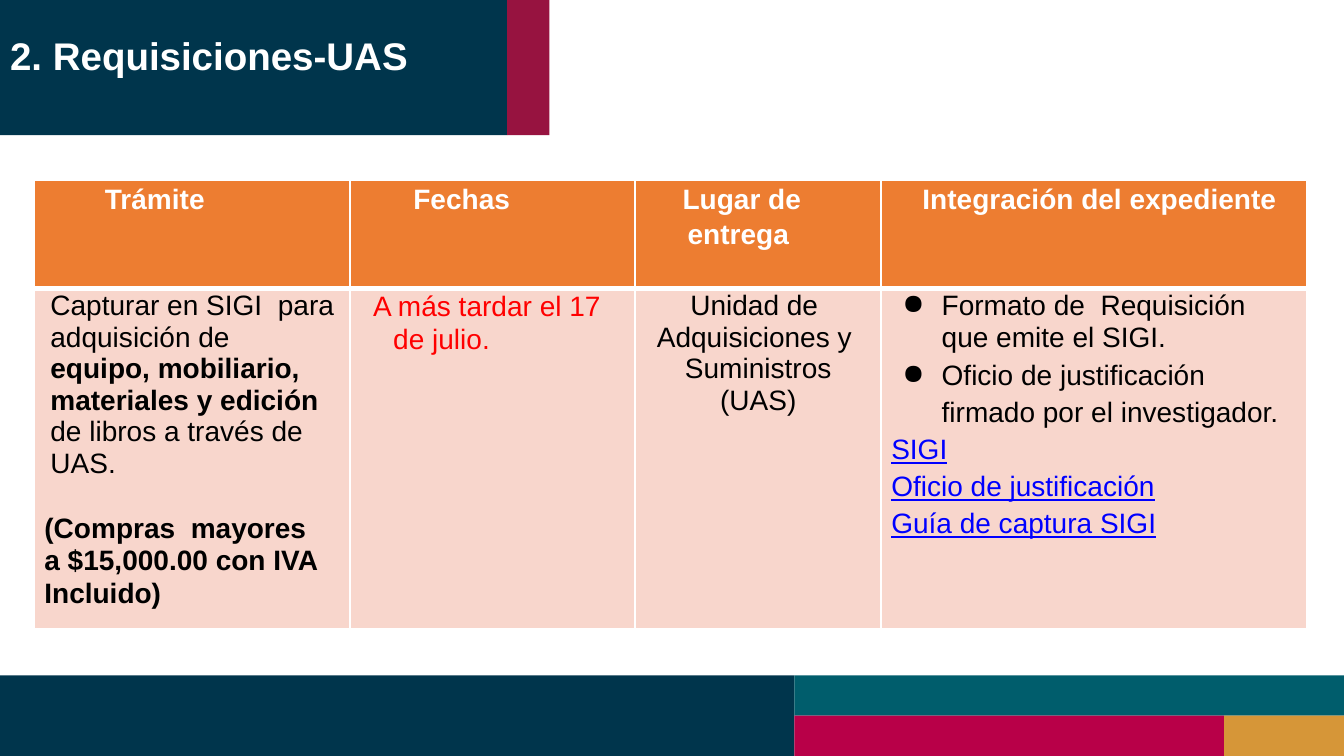
from lxml import etree
from pptx import Presentation, util as u
from pptx.dml.color import RGBColor
from pptx.enum import shapes, text
from pptx.oxml import ns

NAVY = RGBColor(0x00, 0x35, 0x4C)
GOLD = RGBColor(0xD6, 0x96, 0x38)
CRIMSON = RGBColor(0xB8, 0x00, 0x48)
TEAL = RGBColor(0x00, 0x5D, 0x6C)
WINE = RGBColor(0x97, 0x13, 0x40)
ORANGE = RGBColor(0xED, 0x7D, 0x31)
PINK = RGBColor(0xF8, 0xD6, 0xCC)
WHITE = RGBColor(0xFF, 0xFF, 0xFF)
BLACK = RGBColor(0x00, 0x00, 0x00)
RED = RGBColor(0xFF, 0x00, 0x00)
BLUE = RGBColor(0x00, 0x00, 0xFF)

CENTER = text.PP_ALIGN.CENTER
BANDS = [
    (0, 0, 5.03, 1.34, NAVY),
    (5.03, 0, 0.42, 1.34, WINE),
    (0, 6.7, 7.88, 0.8, NAVY),
    (7.88, 6.7, 5.45, 0.4, TEAL),
    (7.88, 7.1, 4.26, 0.4, CRIMSON),
    (12.14, 7.1, 1.19, 0.4, GOLD),
]
COLUMN_WIDTHS = [3.13, 2.83, 2.44, 4.22]
ROW_HEIGHTS = [1.07, 3.38]
THIN, THICK = 1.5, 4.25

HEADERS = [
    [dict(runs=["Trámite"], left=0.7, line=1.12)],
    [dict(runs=["Fechas"], left=0.63, line=1.12)],
    [dict(runs=["Lugar de"], left=0.47, line=1.12),
     dict(runs=["entrega"], left=0.52, before=2.5)],
    [dict(runs=["Integración del expediente"], left=0.11, line=1.12, align=CENTER)],
]
LINKS = ["SIGI", "Oficio de justificación", "Guía de captura SIGI"]
BULLET = dict(left=0.6, first=-0.39, right=0.2, bullet="●")
BODY = [
    [dict(runs=["Capturar en SIGI  para adquisición de  ",
                ("equipo, mobiliario, materiales y edición", dict(bold=True)),
                " de libros a través de UAS."],
          left=0.16, right=0.1, line=1.01),
     dict(runs=[("(Compras  mayores a $15,000.00 con IVA Incluido)", dict(bold=True))],
          left=0.1, right=0.3, line=1.03, before=23.7)],
    [dict(runs=[("A más tardar el 17 de julio.", dict(color=RED))],
          left=0.43, first=-0.2, line=1.04)],
    [dict(runs=["Unidad de  Adquisiciones y  Suministros (UAS)"],
          left=0.13, right=0.13, line=1.01, align=CENTER)],
    [dict(BULLET, runs=["Formato de  Requisición que emite el SIGI."], line=1.01),
     dict(BULLET, runs=["Oficio de justificación firmado por el investigador."],
          line=1.19, before=0.6)]
    + [dict(runs=[(link, dict(color=BLUE, underline=True))], left=0.1, line=1.19)
       for link in LINKS],
]


def apply_format(target, values):
    for name, value in values.items():
        if name == "color":
            target.color.rgb = value
        else:
            setattr(target, name, value)


def add_band(slide, left, top, width, height, color):
    band = slide.shapes.add_shape(
        shapes.MSO_SHAPE.RECTANGLE,
        *(u.Inches(length) for length in (left, top, width, height)))
    band.shadow.inherit = False
    band.fill.solid()
    band.fill.fore_color.rgb = color
    band.line.fill.background()


def write_paragraph(paragraph, base_font, runs, left=0, first=0, right=0,
                    line=1.0, before=0, align=text.PP_ALIGN.LEFT, bullet=None):
    properties = paragraph._p.get_or_add_pPr()
    for name, value in dict(marL=left, marR=right, indent=first).items():
        properties.set(name, str(int(u.Inches(value))))
    if bullet:
        color = etree.SubElement(properties, ns.qn("a:buClr"))
        etree.SubElement(color, ns.qn("a:srgbClr"), val=str(BLACK))
        etree.SubElement(properties, ns.qn("a:buChar"), char=bullet)
    else:
        etree.SubElement(properties, ns.qn("a:buNone"))
    apply_format(paragraph, dict(alignment=align, line_spacing=line,
                                 space_before=u.Pt(before)))
    for item in runs:
        wording, extra = (item, {}) if isinstance(item, str) else item
        run = paragraph.add_run()
        run.text = wording
        apply_format(run.font, {**base_font, **extra})


def set_borders(cell, top, bottom):
    properties = cell._tc.get_or_add_tcPr()
    widths = dict(lnL=THIN, lnR=THIN, lnT=top, lnB=bottom)
    for position, (side, width) in enumerate(widths.items()):
        border = etree.Element(ns.qn(f"a:{side}"), w=str(int(u.Pt(width))))
        fill = etree.SubElement(border, ns.qn("a:solidFill"))
        etree.SubElement(fill, ns.qn("a:srgbClr"), val=str(WHITE))
        properties.insert(position, border)


def fill_cell(cell, paragraphs, fill, base_font, top_inset, borders):
    apply_format(cell, dict(margin_left=0, margin_right=0, margin_bottom=0,
                            margin_top=u.Inches(top_inset),
                            vertical_anchor=text.MSO_ANCHOR.TOP))
    cell.fill.solid()
    cell.fill.fore_color.rgb = fill
    set_borders(cell, *borders)
    frame = cell.text_frame
    for index, values in enumerate(paragraphs):
        paragraph = frame.add_paragraph() if index else frame.paragraphs[0]
        write_paragraph(paragraph, base_font, **values)


def add_procedure_table(slide):
    table = slide.shapes.add_table(
        len(ROW_HEIGHTS), len(COLUMN_WIDTHS), u.Inches(0.34), u.Inches(1.79),
        u.Inches(sum(COLUMN_WIDTHS)), u.Inches(sum(ROW_HEIGHTS))).table
    for column, width in zip(table.columns, COLUMN_WIDTHS):
        column.width = u.Inches(width)
    for row, height in zip(table.rows, ROW_HEIGHTS):
        row.height = u.Inches(height)
    font = dict(name="Arial", size=u.Pt(20))
    header_font = dict(font, bold=True, color=WHITE)
    body_font = dict(font, bold=False, color=BLACK)
    for index, (header, body) in enumerate(zip(HEADERS, BODY)):
        fill_cell(table.cell(0, index), header, ORANGE, header_font, 0, (THIN, THICK))
        fill_cell(table.cell(1, index), body, PINK, body_font, 0.02, (THICK, THIN))


def set_title(slide, wording):
    title = slide.shapes.title
    apply_format(title, dict(left=u.Inches(0.09), top=u.Inches(0.31),
                             width=u.Inches(5.15), height=u.Inches(0.48)))
    apply_format(title.text_frame, dict(
        margin_left=0, margin_right=0, margin_bottom=0, margin_top=u.Inches(0.01),
        word_wrap=True, auto_size=text.MSO_AUTO_SIZE.NONE,
        vertical_anchor=text.MSO_ANCHOR.TOP))
    font = dict(name="Arial", size=u.Pt(27.5), bold=True, color=WHITE)
    write_paragraph(title.text_frame.paragraphs[0], font, [wording], left=0.01)


def main():
    """Build the requisitions slide and save it."""
    presentation = Presentation()
    presentation.slide_width = u.Inches(13.33)
    presentation.slide_height = u.Inches(7.5)
    slide = presentation.slides.add_slide(presentation.slide_layouts[5])
    for band in BANDS:
        add_band(slide, *band)
    title = slide.shapes.title
    slide.shapes._spTree.append(title._element)
    set_title(slide, "2. Requisiciones-UAS")
    add_procedure_table(slide)
    presentation.save("out.pptx")


if __name__ == "__main__":
    main()
